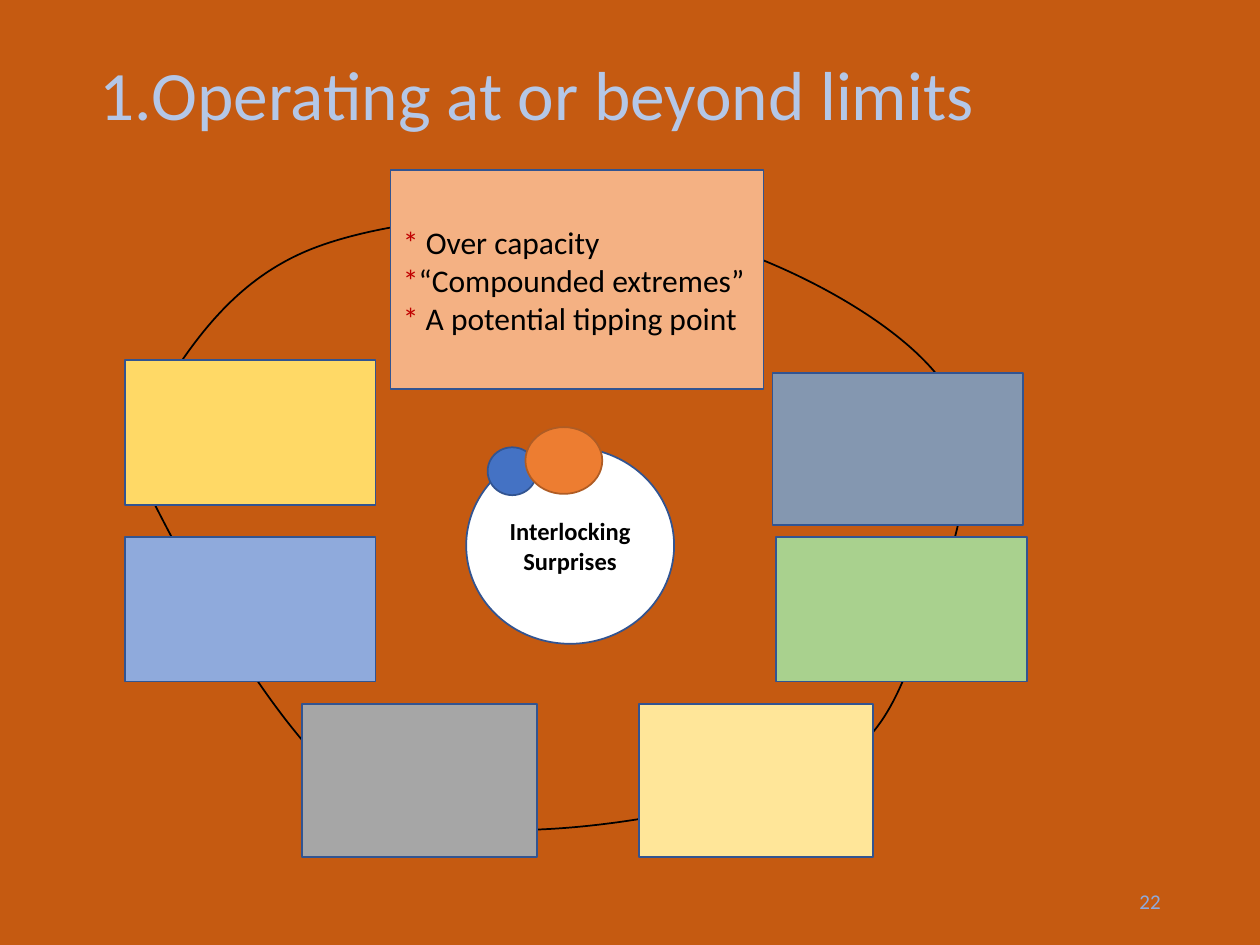
from lxml.etree import SubElement
from pptx import Presentation
from pptx.dml.color import RGBColor
from pptx.enum.shapes import MSO_SHAPE as Shape
from pptx.enum.text import MSO_ANCHOR as Anchor, PP_ALIGN as Align
from pptx.oxml.ns import qn
from pptx.util import Inches, Pt

FONT = "Calibri"
OUTLINE = "325491"

# Ring around the boxes: its extent, a start point, then cubic curves
# (two controls, end)
RING_LEFT, RING_TOP, RING_RIGHT, RING_BOTTOM = 1.05, 1.71, 7.67, 6.58
RING_START = (1.09, 3.43)
RING_CURVES = [
    ((1.44, 2.84), (1.79, 2.24), (2.49, 1.97)),
    ((3.19, 1.70), (4.44, 1.63), (5.28, 1.82)),
    ((6.12, 2.00), (7.18, 2.55), (7.52, 3.09)),
    ((7.86, 3.62), (7.53, 4.49), (7.32, 5.02)),
    ((7.11, 5.54), (7.00, 5.99), (6.28, 6.22)),
    ((5.56, 6.45), (3.86, 6.82), (2.99, 6.39)),
    ((2.12, 5.96), (1.05, 3.64), (1.05, 3.64)),
]

# Surprise boxes: side boxes share a width, bottom boxes share a size
SIDE_W, BOTTOM_W = 1.99, 1.86
TALL, SHORT = 1.21, 1.15
LEFT_X, MIDDLE_Y, BOTTOM_Y = 0.99, 4.26, 5.59
BOXES = [
    (6.13, 2.96, SIDE_W, TALL, "8497B0"),
    (6.16, MIDDLE_Y, SIDE_W, SHORT, "A9D18E"),
    (5.07, BOTTOM_Y, BOTTOM_W, TALL, "FFE699"),
    (2.40, BOTTOM_Y, BOTTOM_W, TALL, "A6A6A6"),
    (LEFT_X, MIDDLE_Y, SIDE_W, SHORT, "8FAADC"),
    (LEFT_X, 2.86, SIDE_W, SHORT, "FFD966"),
]
LIMITS = [("* ", "Over capacity"),
          ("*", "“Compounded extremes”"),
          ("*", " A potential tipping point ")]


def rgb(color):
    return RGBColor.from_string(color)


def style(paragraph, size, color=None, align=None, bold=False):
    paragraph.alignment = align
    font = paragraph.font
    font.name, font.size, font.bold = FONT, Pt(size), bold
    if color:
        font.color.rgb = rgb(color)


def add_figure(slide, kind, left, top, width, height, fill, line=OUTLINE):
    figure = slide.shapes.add_shape(
        kind, *map(Inches, (left, top, width, height)))
    figure.shadow.inherit = False
    figure.fill.solid()
    figure.fill.fore_color.rgb = rgb(fill)
    figure.line.color.rgb = rgb(line)
    figure.line.width = Pt(1)
    frame = figure.text_frame
    frame.word_wrap = True
    frame.vertical_anchor = Anchor.MIDDLE
    return frame


def add_command(outline, command, *points):
    step = SubElement(outline, qn(command))
    for x, y in points:
        SubElement(step, qn("a:pt"), x=str(Inches(x - RING_LEFT)),
                   y=str(Inches(y - RING_TOP)))


def add_ring(slide):
    # The diagonal sets the extent; the curves then take its place
    builder = slide.shapes.build_freeform(Inches(RING_LEFT), Inches(RING_TOP))
    builder.add_line_segments([(Inches(RING_RIGHT), Inches(RING_BOTTOM))],
                              close=False)
    ring = builder.convert_to_shape()
    outline = next(ring.element.iter(qn("a:path")))
    for step in list(outline):
        outline.remove(step)
    add_command(outline, "a:moveTo", RING_START)
    for curve in RING_CURVES:
        add_command(outline, "a:cubicBezTo", *curve)

    ring.shadow.inherit = False
    ring.fill.background()
    ring.line.color.rgb = rgb("000000")
    ring.line.width = Pt(1)


def add_title(slide):
    title = slide.shapes.title
    title.left, title.top, title.width, title.height = map(
        Inches, (0.69, 0.36, 8.51, 0.83))
    frame = title.text_frame
    frame.text = "1.Operating at or beyond limits"
    frame.vertical_anchor = Anchor.MIDDLE
    frame.paragraphs[0].line_spacing = 0.9
    style(frame.paragraphs[0], 39.6, "B4C7E7", Align.LEFT)


def add_page_number(slide):
    frame = slide.shapes.add_textbox(
        *map(Inches, (7.06, 6.95, 2.25, 0.4))).text_frame
    frame.word_wrap = True
    frame.vertical_anchor = Anchor.MIDDLE
    frame.text = "22"
    style(frame.paragraphs[0], 12, "8FAADC", Align.RIGHT)


def add_limits_box(slide):
    frame = add_figure(slide, Shape.RECTANGLE, 3.1, 1.35, 2.96, 1.74, "F4B183")
    for index, parts in enumerate(LIMITS):
        paragraph = frame.add_paragraph() if index else frame.paragraphs[0]
        style(paragraph, 18, align=Align.JUSTIFY)
        for text, color in zip(parts, ("C00000", "000000")):
            run = paragraph.add_run()
            run.text = text
            run.font.color.rgb = rgb(color)


def add_hub(slide):
    hub = add_figure(slide, Shape.OVAL, 3.7, 3.55, 1.65, 1.56, "FFFFFF")
    hub.text = "Interlocking Surprises"
    style(hub.paragraphs[0], 14, "000000", Align.CENTER, bold=True)
    add_figure(slide, Shape.OVAL, 3.87, 3.55, 0.39, 0.38, "4472C4")
    add_figure(slide, Shape.OVAL, 4.17, 3.39, 0.61, 0.53, "ED7D31", "AF5C24")


def main():
    deck = Presentation()
    deck.slide_width, deck.slide_height = Inches(10), Inches(7.5)
    slide = deck.slides.add_slide(deck.slide_layouts[5])
    slide.background.fill.solid()
    slide.background.fill.fore_color.rgb = rgb("C55A11")

    add_title(slide)
    add_page_number(slide)
    # The ring lies behind the boxes it links
    add_ring(slide)
    add_limits_box(slide)
    for *place, fill in BOXES:
        add_figure(slide, Shape.RECTANGLE, *place, fill)
    add_hub(slide)
    deck.save("out.pptx")


if __name__ == "__main__":
    main()
